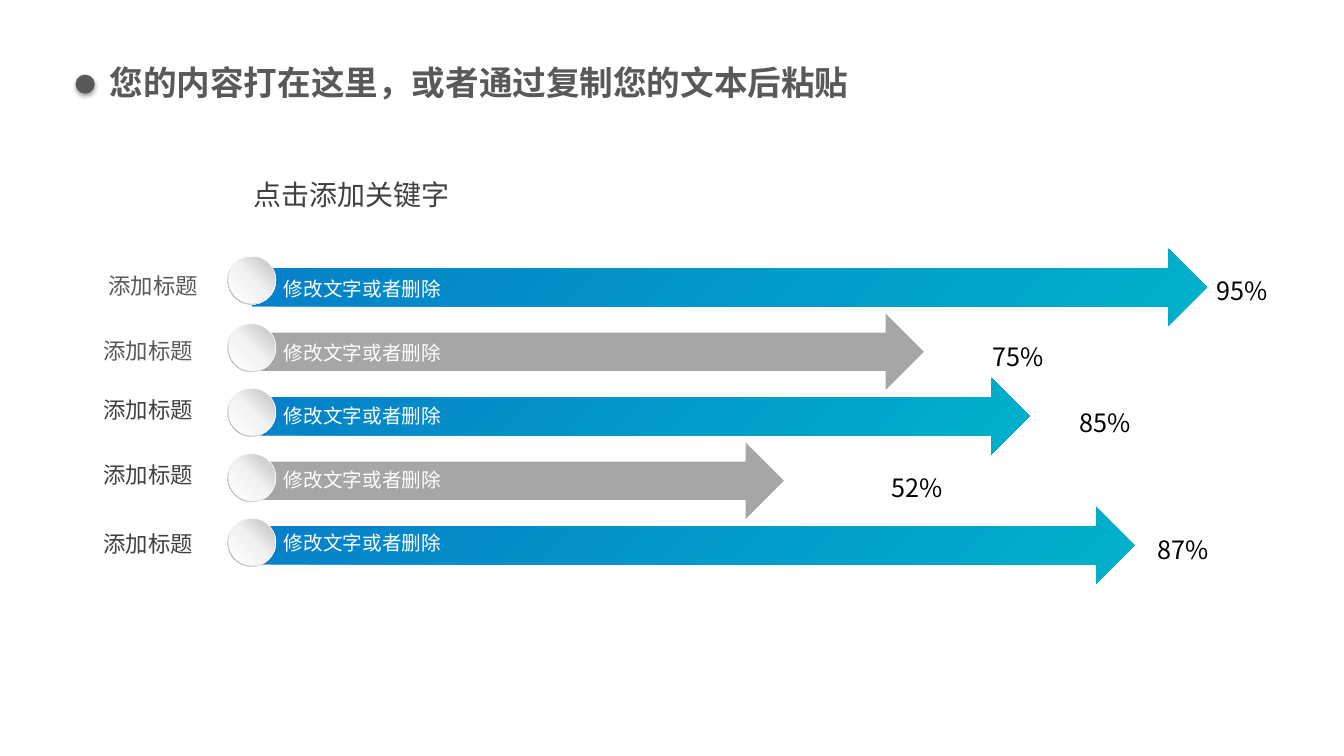
from lxml import etree
from pptx import Presentation
from pptx import util as u
from pptx.dml.color import RGBColor
from pptx.enum import shapes, text
from pptx.oxml import ns

TITLE = "您的内容打在这里，或者通过复制您的文本后粘贴"
HEAD = "点击添加关键字"
LABEL = "添加标题"
NOTE = "修改文字或者删除"
FONT = "Noto Sans CJK SC"
HUE = {"dark": "404040", "mid": "595959", "gray": "A6A6A6",
       "white": "FFFFFF", "black": "000000"}
BLUE = ([(0, "067FC9"), (100, "00B2CA")], 45)
RIM = ([(0, "FFFFFF"), (55, "F2F2F2"), (100, "A6A6A6")], 135)
KNOB = ([(0, "FFFFFF"), (51, "F2F2F2"), (100, "BFBFBF")], 315)

# value, value left and top, label left, top and hue, arrow width and fill, knob top
ROWS = [
    ("95%", 11.98, 2.68, 0.98, 2.65, "mid", 9.48, BLUE, 2.54),
    ("75%", 9.75, 3.34, 0.93, 3.30, "mid", 6.67, "gray", 3.21),
    ("85%", 10.62, 3.99, 0.93, 3.88, "dark", 7.72, BLUE, 3.85),
    ("52%", 8.75, 4.64, 0.93, 4.53, "dark", 5.28, "gray", 4.50),
    ("87%", 11.39, 5.25, 0.93, 5.21, "dark", 8.76, BLUE, 5.14),
]
BAR_TOP, BAR_STEP = 2.47, 0.64
NOTE_TOP, NOTE_STEP = 2.70, 0.63

deck = Presentation()
deck.slide_width, deck.slide_height = u.Inches(13.34), u.Inches(7.5)
slide = deck.slides.add_slide(deck.slide_layouts[6])


def write(words, x, y, w, h, size, hue, bold=False, wrap=True, pad=(0.1, 0.05)):
    box = slide.shapes.add_textbox(*map(u.Inches, (x, y, w, h)))
    frame = box.text_frame
    frame.word_wrap = wrap
    frame.auto_size = text.MSO_AUTO_SIZE.SHAPE_TO_FIT_TEXT
    frame.margin_left = frame.margin_right = u.Inches(pad[0])
    frame.margin_top = frame.margin_bottom = u.Inches(pad[1])
    run = frame.paragraphs[0].add_run()
    run.text = words
    font = run.font
    font.name, font.size, font.bold = FONT, u.Pt(size), bold
    font.color.rgb = RGBColor.from_string(HUE[hue])
    east = etree.SubElement(run._r.get_or_add_rPr(), ns.qn("a:ea"))
    east.set("typeface", FONT)


def blend(shape, stops, angle):
    """Fill a shape with a linear gradient, angle clockwise."""
    grad = etree.Element(ns.qn("a:gradFill"), rotWithShape="1")
    marks = etree.SubElement(grad, ns.qn("a:gsLst"))
    for place, hue in stops:
        mark = etree.SubElement(marks, ns.qn("a:gs"), pos=str(place * 1000))
        etree.SubElement(mark, ns.qn("a:srgbClr"), val=hue)
    etree.SubElement(grad, ns.qn("a:lin"), ang=str(angle * 60000), scaled="0")
    shape._element.spPr.find(ns.qn("a:prstGeom")).addnext(grad)


def draw(kind, x, y, w, h, fill):
    shape = slide.shapes.add_shape(kind, *map(u.Inches, (x, y, w, h)))
    shape.shadow.inherit = False
    shape.line.fill.background()
    if isinstance(fill, tuple):
        blend(shape, *fill)
    else:
        shape.fill.solid()
        shape.fill.fore_color.rgb = RGBColor.from_string(HUE[fill])
    return shape


def shade(shape):
    """Add a soft shadow straight below a shape."""
    effects = shape._element.spPr.find(ns.qn("a:effectLst"))
    cast = etree.SubElement(effects, ns.qn("a:outerShdw"), blurRad=str(u.Pt(3.1)),
                            dist=str(u.Pt(1.8)), dir="5400000", rotWithShape="0")
    hue = etree.SubElement(cast, ns.qn("a:srgbClr"), val=HUE["black"])
    etree.SubElement(hue, ns.qn("a:alpha"), val="35000")


KIND = shapes.MSO_SHAPE

# Title and heading
write(TITLE, 0.99, 0.57, 8.91, 0.5, 24, "mid", bold=True)
shade(draw(KIND.OVAL, 0.75, 0.74, 0.19, 0.19, "mid"))
write(HEAD, 2.41, 1.7, 3.26, 0.45, 20, "dark", pad=(0.11, 0.06))

# Arrow bars with their labels and values
for i, (value, vx, vy, lx, ly, hue, width, fill, top) in enumerate(ROWS):
    write(LABEL, lx, ly, 1.29, 0.37, 16, hue)
    draw(KIND.RIGHT_ARROW, 2.5, BAR_TOP + i * BAR_STEP, width, 0.76, fill)
    write(NOTE, 2.72, NOTE_TOP + i * NOTE_STEP, 1.77, 0.34, 14, "white", wrap=False)
    write(value, vx, vy, 0.98, 0.4, 18, "black")

    # Knob at the start of the bar
    rim = draw(KIND.DONUT, 2.26, top, 0.48, 0.48, RIM)
    rim.adjustments[0] = 0.05
    draw(KIND.OVAL, 2.27, top + 0.01, 0.46, 0.46, KNOB)

deck.save("out.pptx")
